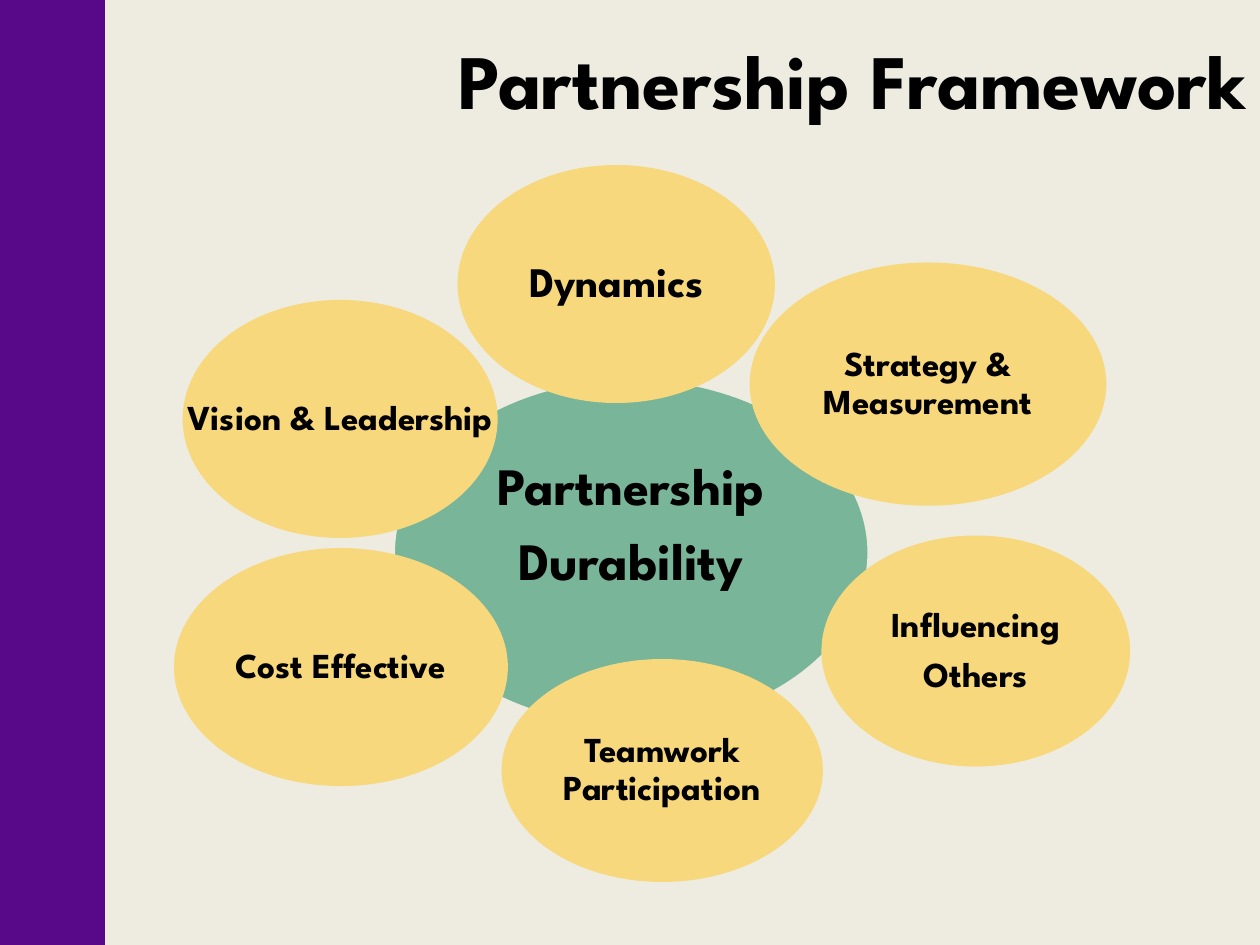
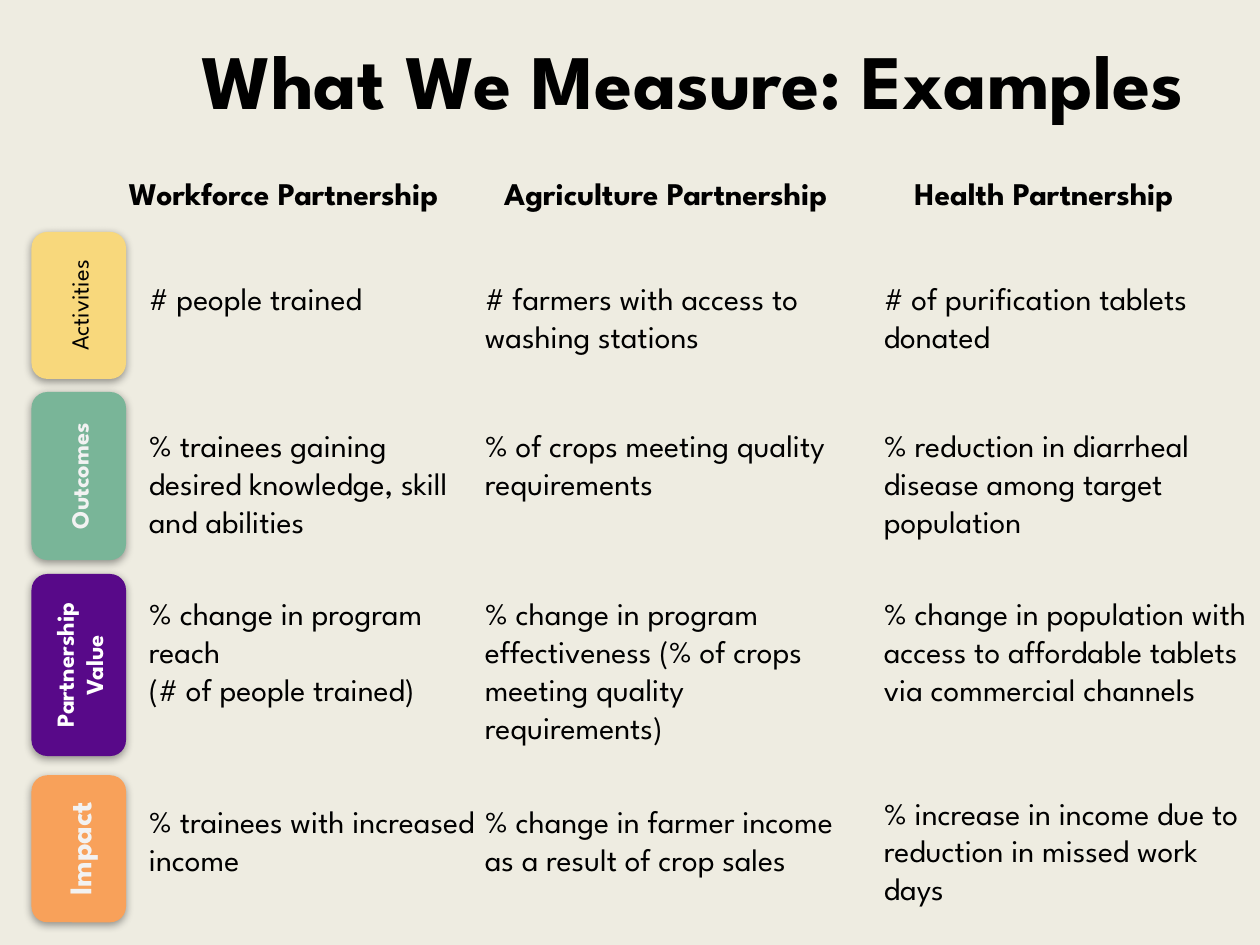
from lxml.etree import SubElement
from pptx import Presentation
from pptx.dml.color import RGBColor
from pptx.enum.shapes import MSO_SHAPE
from pptx.enum.text import MSO_ANCHOR, MSO_AUTO_SIZE, PP_ALIGN
from pptx.oxml.ns import qn
from pptx.util import Pt

FONT = "League Spartan"
CREAM = RGBColor(0xEE, 0xEC, 0xE1)
YELLOW = RGBColor(0xF8, 0xD8, 0x7C)
GREEN = RGBColor(0x79, 0xB5, 0x98)
PURPLE = RGBColor(0x58, 0x09, 0x89)
ORANGE = RGBColor(0xF8, 0xA1, 0x5A)
BLACK = RGBColor(0, 0, 0)
PALE = RGBColor(0xF2, 0xF2, 0xF2)
WHITE = RGBColor(0xFF, 0xFF, 0xFF)

LABEL_GAP = 0.35
LINE_HEIGHT = 21.7
BOX_MARGINS = 7.3

PETALS = [
    ("Dynamics", 261.4, 94.3, 181.4, 136, 24, True),
    ("Strategy & Measurement", 428.4, 150, 203.8, 139, 20, True),
    ("Influencing\nOthers", 469.4, 306, 176.4, 132, 20, True),
    ("Teamwork Participation", 286.6, 376.6, 183.6, 127.4, 20, True),
    ("Cost Effective", 99.4, 313.2, 190.8, 136, 20, True),
    ("Vision & Leadership", 104.4, 171.4, 180, 136, 20, False),
]

STAGES = [
    ("Activities", 132.5, 84, YELLOW, BLACK, 14, False),
    ("Outcomes", 224, 96, GREEN, PALE, 14, True),
    ("Partnership Value", 328, 104, PURPLE, WHITE, 14, True),
    ("Impact", 443, 84, ORANGE, PALE, 18, True),
]

HEADINGS = [
    ("Workforce Partnership", 42, 240, 1),
    ("Agriculture Partnership", 276, 209, 2),
    ("Health Partnership", 492, 209, 1),
]

MEASURES = [
    (78, 204, [
        ("# people trained", 156, 1),
        ("% trainees gaining desired knowledge, skill and abilities", 240, 3),
        ("% change in program reach\n(# of people trained)", 336, 3),
        ("% trainees with increased income", 455, 2),
    ]),
    (270, 222, [
        ("# farmers with access to washing stations", 156, 2),
        ("% of crops meeting quality requirements", 240, 2),
        ("% change in program effectiveness (% of crops meeting quality requirements)", 336, 4),
        ("% change in farmer income as a result of crop sales", 455, 3),
    ]),
    (498, 222, [
        ("# of purification tablets donated", 156, 2),
        ("% reduction in diarrheal disease among target population", 240, 3),
        ("% change in population with access to affordable tablets via commercial channels", 336, 4),
        ("% increase in income due to reduction in missed work days", 450, 3),
    ]),
]


def write(frame, text, size=18, bold=False, color=BLACK, align=PP_ALIGN.LEFT,
          anchor=MSO_ANCHOR.TOP, wrap=True, line_spacing=None, space_after=None):
    frame.text = text
    frame.word_wrap = wrap
    frame.vertical_anchor = anchor
    for paragraph in frame.paragraphs:
        paragraph.alignment = align
        if line_spacing:
            paragraph.line_spacing = line_spacing
        if space_after:
            paragraph.space_after = Pt(space_after)
        for run in paragraph.runs:
            run.font.name = FONT
            run.font.size = Pt(size)
            run.font.bold = bold
            run.font.color.rgb = color


class Deck:
    def __init__(self):
        self.presentation = Presentation()
        self.presentation.slide_width = Pt(720)
        self.presentation.slide_height = Pt(540)
        background = self.presentation.slide_master.background.fill
        background.solid()
        background.fore_color.rgb = CREAM
        self.slide = None

    def add_slide(self, title, align):
        layout = self.presentation.slide_layouts[5]
        self.slide = self.presentation.slides.add_slide(layout)
        heading = self.slide.shapes.title
        heading.left, heading.top = Pt(72), Pt(0)
        heading.width, heading.height = Pt(648), Pt(90)
        write(heading.text_frame, title, size=44, bold=True, align=align,
              anchor=MSO_ANCHOR.MIDDLE)
        heading.text_frame.auto_size = MSO_AUTO_SIZE.NONE

    def shape(self, kind, left, top, width, height, fill, outline=None):
        figure = self.slide.shapes.add_shape(
            kind, Pt(left), Pt(top), Pt(width), Pt(height))
        figure.shadow.inherit = False
        figure.fill.solid()
        figure.fill.fore_color.rgb = fill
        if outline:
            figure.line.color.rgb = outline
            figure.line.width = Pt(2.25)
        else:
            figure.line.fill.background()
        return figure

    def oval(self, text, left, top, width, height, size, wrap=True,
             fill=YELLOW, outline=None, margin=2.2, bottom=2.2):
        figure = self.shape(MSO_SHAPE.OVAL, left, top, width, height, fill, outline)
        frame = figure.text_frame
        frame.margin_left = frame.margin_right = frame.margin_top = Pt(margin)
        frame.margin_bottom = Pt(bottom)
        write(frame, text, size=size, bold=True, align=PP_ALIGN.CENTER,
              anchor=MSO_ANCHOR.MIDDLE, wrap=wrap, line_spacing=0.9,
              space_after=size * LABEL_GAP)

    def upright_tag(self, text, top, length, fill, color, size, bold):
        center, thickness = 45, 54
        tag = self.shape(MSO_SHAPE.ROUNDED_RECTANGLE, center - length / 2,
                         top + (length - thickness) / 2, length, thickness, fill)
        tag.rotation = 270
        self.drop_shadow(tag)
        write(tag.text_frame, text, size=size, bold=bold, color=color,
              align=PP_ALIGN.CENTER, anchor=MSO_ANCHOR.MIDDLE)

    def drop_shadow(self, figure):
        effects = figure.element.spPr.find(qn("a:effectLst"))
        shadow = SubElement(effects, qn("a:outerShdw"), blurRad=str(Pt(5)),
                            dist=str(Pt(1.6)), dir="5400000", rotWithShape="0")
        tint = SubElement(shadow, qn("a:srgbClr"), val=str(BLACK))
        SubElement(tint, qn("a:alpha"), val="38000")

    def text(self, text, left, top, width, lines, **style):
        box = self.slide.shapes.add_textbox(
            Pt(left), Pt(top), Pt(width), Pt(BOX_MARGINS + lines * LINE_HEIGHT))
        write(box.text_frame, text, **style)
        box.text_frame.auto_size = MSO_AUTO_SIZE.SHAPE_TO_FIT_TEXT


def framework_slide(deck):
    deck.add_slide("Partnership Framework", PP_ALIGN.RIGHT)
    deck.oval("Partnership\nDurability", 224.6, 216, 272.2, 199.4, 30,
              fill=GREEN, outline=CREAM, margin=3, bottom=33)
    for petal in PETALS:
        deck.oval(*petal)
    deck.shape(MSO_SHAPE.RECTANGLE, 0, 0, 60, 540, PURPLE)


def measures_slide(deck):
    deck.add_slide("What We Measure: Examples", PP_ALIGN.CENTER)
    for stage in STAGES:
        deck.upright_tag(*stage)
    for partnership, left, width, lines in HEADINGS:
        deck.text(partnership, left, 96, width, lines, bold=True,
                  align=PP_ALIGN.CENTER)
    for left, width, measures in MEASURES:
        for measure, top, lines in measures:
            deck.text(measure, left, top, width, lines)


def main():
    deck = Deck()
    framework_slide(deck)
    measures_slide(deck)
    deck.presentation.save("out.pptx")


if __name__ == "__main__":
    main()
